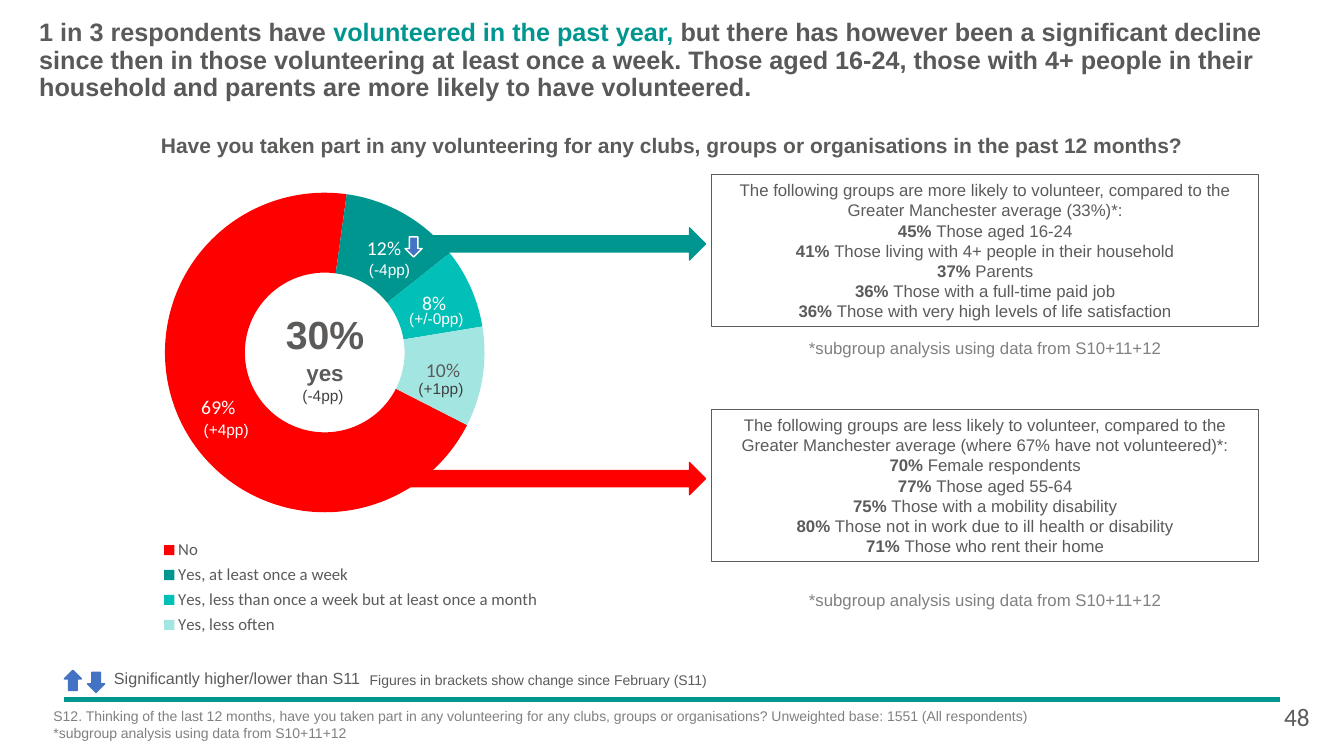
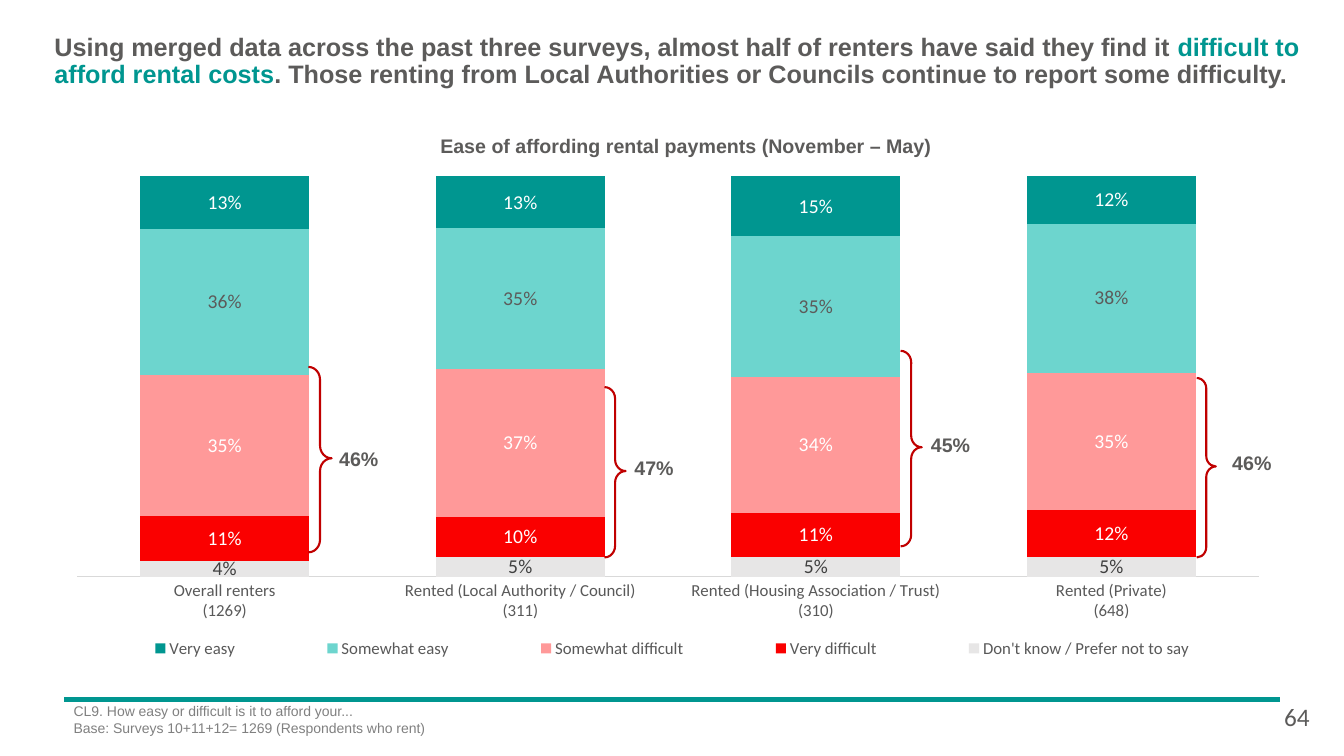
import pptx
import pptx.chart.data
import pptx.dml.color
import pptx.enum.chart
import pptx.enum.shapes
import pptx.enum.text
import pptx.oxml
import pptx.oxml.ns
import pptx.util
from lxml import etree

Pt = pptx.util.Pt
RGB = pptx.dml.color.RGBColor
SHAPE = pptx.enum.shapes.MSO_SHAPE
ALIGN = pptx.enum.text.PP_ALIGN
CHART = pptx.enum.chart.XL_CHART_TYPE
LEGEND = pptx.enum.chart.XL_LEGEND_POSITION
qn = pptx.oxml.ns.qn

TEAL = RGB(0x00, 0x96, 0x90)
TURQUOISE = RGB(0x00, 0xC0, 0xB7)
AQUA = RGB(0x6D, 0xD5, 0xCE)
PALE_AQUA = RGB(0xA3, 0xE5, 0xE0)
RED = RGB(0xFF, 0x00, 0x00)
BAR_RED = RGB(0xFA, 0x00, 0x00)
PINK = RGB(0xFF, 0x99, 0x99)
BRACE_RED = RGB(0xC0, 0x00, 0x00)
BLUE = RGB(0x44, 0x72, 0xC4)
TEXT = RGB(0x5C, 0x5B, 0x5A)
AXIS_TEXT = RGB(0x59, 0x59, 0x59)
DARK = RGB(0x40, 0x40, 0x40)
NOTE = RGB(0x80, 0x80, 0x80)
AXIS_LINE = RGB(0xD9, 0xD9, 0xD9)
LIGHT = RGB(0xE7, 0xE6, 0xE6)
WHITE = RGB(0xFF, 0xFF, 0xFF)
BLACK = RGB(0x00, 0x00, 0x00)


def set_font(font, size, color, name="Arial", bold=None):
    font.size = Pt(size)
    font.name = name
    font.color.rgb = color
    font.bold = bold


def fill_text(tf, paras, size, color=TEXT, bold=None, align=ALIGN.LEFT, name="Arial", spacing=None):
    tf.word_wrap = True
    for i, runs in enumerate(paras):
        p = tf.paragraphs[0] if i == 0 else tf.add_paragraph()
        p.alignment = align
        if spacing:
            p.line_spacing = spacing
        set_font(p.font, size, color, name, bold)
        for run in [runs] if isinstance(runs, str) else runs:
            text, run_bold, run_color = run if isinstance(run, tuple) else (run, None, None)
            r = p.add_run()
            r.text = text
            if run_bold:
                r.font.bold = True
            if run_color is not None:
                r.font.color.rgb = run_color


def add_text(s, box, paras, size, **style):
    tf = s.shapes.add_textbox(*map(Pt, box)).text_frame
    tf.margin_left = tf.margin_right = tf.margin_top = tf.margin_bottom = 0
    fill_text(tf, paras, size, **style)


def add_shape(s, kind, box, fill=None, line=None, width=1):
    sp = s.shapes.add_shape(kind, *map(Pt, box))
    sp.shadow.inherit = False
    if fill is None:
        sp.fill.background()
    else:
        sp.fill.solid()
        sp.fill.fore_color.rgb = fill
    sp.line.color.rgb = fill if line is None else line
    sp.line.width = Pt(width)
    return sp


def add_frame(prs, title_box, title, source_pos, source, number):
    s = prs.slides.add_slide(prs.slide_layouts[6])
    rule = s.shapes.add_connector(pptx.enum.shapes.MSO_CONNECTOR.STRAIGHT, Pt(46), Pt(499.7), Pt(914), Pt(499.7))
    rule.line.color.rgb = TEAL
    rule.line.width = Pt(3)
    etree.SubElement(rule._element.spPr, qn("a:effectLst"))
    add_text(s, title_box, [title], 18, bold=True, spacing=0.9)
    add_text(s, (*source_pos, 848, 33), source, 10, color=NOTE)
    add_text(s, (917.3, 501.1, 31, 22), [number], 18, name="Calibri")
    return s


def set_layout(parent, index, x, y, w, h, inner=False):
    for old in parent.findall(qn("c:layout")):
        parent.remove(old)
    layout = etree.Element(qn("c:layout"))
    manual = etree.SubElement(layout, qn("c:manualLayout"))
    values = [("layoutTarget", "inner")] if inner else []
    values += [("xMode", "edge"), ("yMode", "edge"), ("x", x), ("y", y), ("w", w), ("h", h)]
    for tag, value in values:
        etree.SubElement(manual, qn("c:" + tag)).set("val", str(value))
    parent.insert(index, layout)


def add_chart(s, kind, box, categories, series, plot_area, legend_pos, legend_area, legend_color):
    data = pptx.chart.data.CategoryChartData(number_format="0%")
    data.categories = categories
    for name, values in series:
        data.add_series(name, values)
    chart = s.shapes.add_chart(kind, *map(Pt, box), data).chart
    set_font(chart.font, 10, BLACK, "Calibri")
    chart.has_title = False
    chart.has_legend = True
    chart.legend.position = legend_pos
    chart.legend.include_in_layout = False
    set_font(chart.legend.font, 12, legend_color, "Calibri")
    set_layout(chart._chartSpace.chart.plotArea, 0, *plot_area, inner=True)
    set_layout(chart.legend._element, 1, *legend_area)
    return chart


def show_values(labels, color):
    labels.show_value = True
    labels.show_percentage = False
    labels.number_format = "0%"
    labels.number_format_is_linked = False
    set_font(labels.font, 14, color, "Calibri")


def add_doughnut(s, box):
    x, y = box[:2]
    cats = ["No", "Yes, at least once a week", "Yes, less than once a week but at least once a month", "Yes, less often"]
    chart = add_chart(s, CHART.DOUGHNUT, box, cats, [("Series 1", (0.69, 0.12, 0.08, 0.1))],
                      (0.2, 0.068, 0.584, 0.612), LEGEND.BOTTOM, (0.175, 0.724, 0.73, 0.2), TEXT)
    plot = chart.plots[0]
    plot.vary_by_categories = True
    plot._element.find(qn("c:firstSliceAng")).set("val", "117")
    ser = plot.series[0]
    show_values(ser.data_labels, WHITE)
    for i, color in enumerate((RED, TEAL, TURQUOISE, PALE_AQUA)):
        fill = ser.points[i].format.fill
        fill.solid()
        fill.fore_color.rgb = color
    set_font(ser.points[3].data_label.font, 14, TEXT, "Calibri")

    add_text(s, (x + 152.6, y + 109.5, 80, 53), ["30%"], 28, bold=True, align=ALIGN.CENTER)
    add_text(s, (x + 152.6, y + 144, 80, 19), ["yes"], 16, bold=True, align=ALIGN.CENTER)
    changes = [("(+4pp)", 122, 194.8, WHITE), ("(-4pp)", 191.2, 170.3, DARK), ("(-4pp)", 238.7, 80.3, WHITE),
               ("(+/-0pp)", 272.2, 115.6, WHITE), ("(+1pp)", 275.4, 165.3, DARK)]
    for text, cx, cy, color in changes:
        add_text(s, (x + cx - 28, y + cy - 7, 56, 14), [text], 11, color=color, align=ALIGN.CENTER)


def add_group_panel(s, box, color, arrow_x, intro, groups, note_dy):
    x, y, w, h = box
    add_shape(s, SHAPE.RIGHT_ARROW, (arrow_x, y + 38.1, x - 4.3 - arrow_x, 23), color)
    sp = add_shape(s, SHAPE.RECTANGLE, box, line=TEXT, width=0.75)
    paras = [intro] + [[(share + " ", True, None), group] for share, group in groups]
    fill_text(sp.text_frame, paras, 12, align=ALIGN.CENTER)
    add_text(s, (x, y + note_dy, w, 14.4), ["*subgroup analysis using data from S10+11+12"], 12,
             color=NOTE, align=ALIGN.CENTER)


def add_significance_key(s, x, y):
    add_shape(s, SHAPE.UP_ARROW, (x, y + 1.4, 12.2, 14.4), BLUE)
    add_shape(s, SHAPE.DOWN_ARROW, (x + 16.6, y + 2.8, 12.2, 14.4), BLUE)
    add_text(s, (x + 35.4, y, 182, 14), ["Significantly higher/lower than S11"], 11.5)
    add_text(s, (x + 214.6, y + 2.1, 247.7, 12), ["Figures in brackets show change since February (S11)"], 10,
             align=ALIGN.CENTER)


def add_volunteering_slide(prs):
    title = ["1 in 3 respondents have ", ("volunteered in the past year, ", None, TEAL),
             ("but there has however been a significant decline since then in those volunteering at least once a week. "
              "Those aged 16-24, those with 4+ people in their household and parents are more likely to have "
              "volunteered.", None, AXIS_TEXT)]
    source = ["S12. Thinking of the last 12 months, have you taken part in any volunteering for any clubs, groups or "
              "organisations? Unweighted base: 1551 (All respondents)",
              "*subgroup analysis using data from S10+11+12"]
    s = add_frame(prs, (28, 14.4, 904, 59), title, (38.2, 505.4), source, "48")
    question = "Have you taken part in any volunteering for any clubs, groups or organisations in the past 12 months?"
    add_text(s, (44, 94.3, 872, 18), [question], 15, bold=True, align=ALIGN.CENTER)
    add_doughnut(s, (39.6, 112.3, 391, 373))
    add_group_panel(
        s, (508.3, 124.6, 391, 108.7), TEAL, 295.9,
        "The following groups are more likely to volunteer, compared to the Greater Manchester average (33%)*:",
        [("45%", "Those aged 16-24"), ("41%", "Those living with 4+ people in their household"), ("37%", "Parents"),
         ("36%", "Those with a full-time paid job"), ("36%", "Those with very high levels of life satisfaction")],
        116.6)
    add_group_panel(
        s, (508.3, 292.3, 391, 108.7), RED, 274.3,
        "The following groups are less likely to volunteer, compared to the Greater Manchester average "
        "(where 67% have not volunteered)*:",
        [("70%", "Female respondents"), ("77%", "Those aged 55-64"), ("75%", "Those with a mobility disability"),
         ("80%", "Those not in work due to ill health or disability"), ("71%", "Those who rent their home")],
        128.9)
    add_shape(s, SHAPE.DOWN_ARROW, (289.4, 169.2, 12.2, 14.4), BLUE, WHITE)
    add_significance_key(s, 46, 477.4)


def add_rent_chart(s, box):
    x, y = box[:2]
    cats = ["Overall renters\n(1269)", "Rented (Local Authority / Council)\n(311)",
            "Rented (Housing Association / Trust)\n(310)", "Rented (Private)\n(648)"]
    answers = [("Don't know / Prefer not to say", (0.04, 0.05, 0.05, 0.05), LIGHT, DARK),
               ("Very difficult", (0.11, 0.1, 0.11, 0.12), BAR_RED, WHITE),
               ("Somewhat difficult", (0.35, 0.37, 0.34, 0.35), PINK, WHITE),
               ("Somewhat easy", (0.36, 0.35, 0.35, 0.38), AQUA, TEXT),
               ("Very easy", (0.13, 0.13, 0.15, 0.12), TEAL, WHITE)]
    chart = add_chart(s, CHART.COLUMN_STACKED_100, box, cats, [a[:2] for a in answers],
                      (0.007, 0, 0.979, 0.763), LEGEND.RIGHT, (0, 0.869, 1, 0.06), AXIS_TEXT)
    plot = chart.plots[0]
    plot.vary_by_categories = False
    plot.gap_width = 75
    plot.overlap = 100
    for ser, (_, _, color, label_color) in zip(plot.series, answers):
        ser.format.fill.solid()
        ser.format.fill.fore_color.rgb = color
        show_values(ser.data_labels, label_color)
        ser.data_labels.position = pptx.enum.chart.XL_LABEL_POSITION.CENTER
    chart.value_axis.visible = False
    chart.value_axis.has_major_gridlines = False
    axis = chart.category_axis
    axis.major_tick_mark = pptx.enum.chart.XL_TICK_MARK.NONE
    axis.format.line.color.rgb = AXIS_LINE
    axis.format.line.width = Pt(0.75)
    set_font(axis.tick_labels.font, 12, AXIS_TEXT, "Calibri")

    braces = [("46%", 136.1, 16.6, 132.5, 10.1, 193), ("47%", 150.5, 15.1, 121.7, 9.5, 199.4),
              ("45%", 124.6, 15.1, 139.7, 9.8, 182.9), ("46%", 144, 13.7, 128.2, 13.5, 195.8)]
    for i, (total, top, w, h, label_dx, label_y) in enumerate(braces):
        left = x + 171.3 + 211.5 * i
        sp = add_shape(s, SHAPE.RIGHT_BRACE, (left, y + top, w, h), line=BRACE_RED, width=1.5)
        sp.adjustments[0], sp.adjustments[1] = 0.545, 0.493
        add_text(s, (left + label_dx, y + label_y, 51.8, 17.3), [total], 14, bold=True, align=ALIGN.CENTER)


def add_renting_slide(prs):
    title = ["Using merged data across the past three surveys, almost half of renters have said they find it ",
             ("difficult to afford rental costs", None, TEAL),
             ". Those renting from Local Authorities or Councils continue to report some difficulty."]
    source = ["CL9. How easy or difficult is it to afford your...", "Base: Surveys 10+11+12= 1269 (Respondents who rent)"]
    s = add_frame(prs, (38.9, 24.5, 891, 51), title, (52.6, 501.8), source, "64")
    add_text(s, (283, 95.8, 414, 17.3), ["Ease of affording rental payments (November – May)"], 14,
             bold=True, align=ALIGN.CENTER)
    add_rent_chart(s, (49, 126, 862.6, 375))


def main():
    prs = pptx.Presentation()
    prs.slide_width, prs.slide_height = Pt(960), Pt(540)
    add_volunteering_slide(prs)
    add_renting_slide(prs)
    prs.save("out.pptx")


if __name__ == "__main__":
    main()
